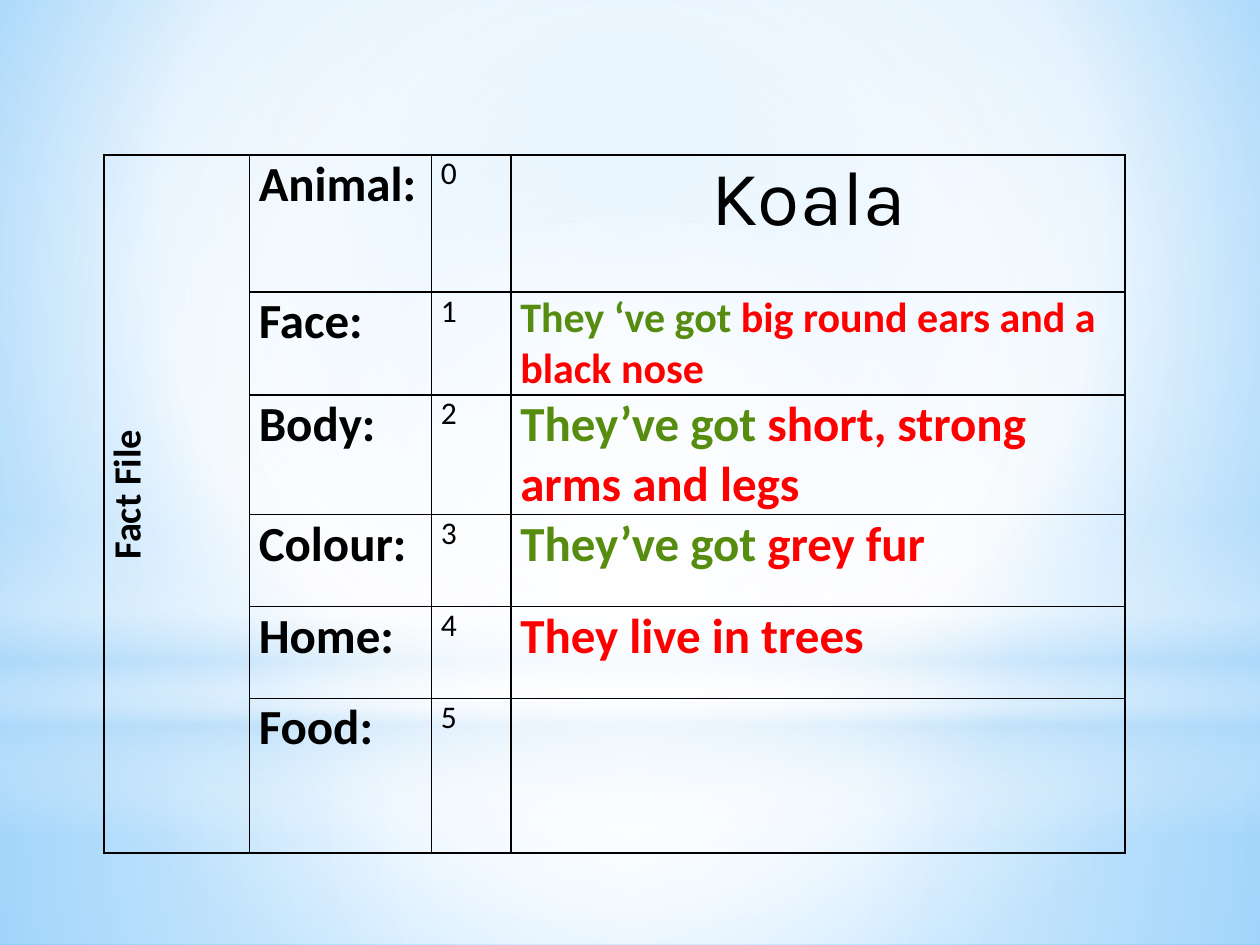
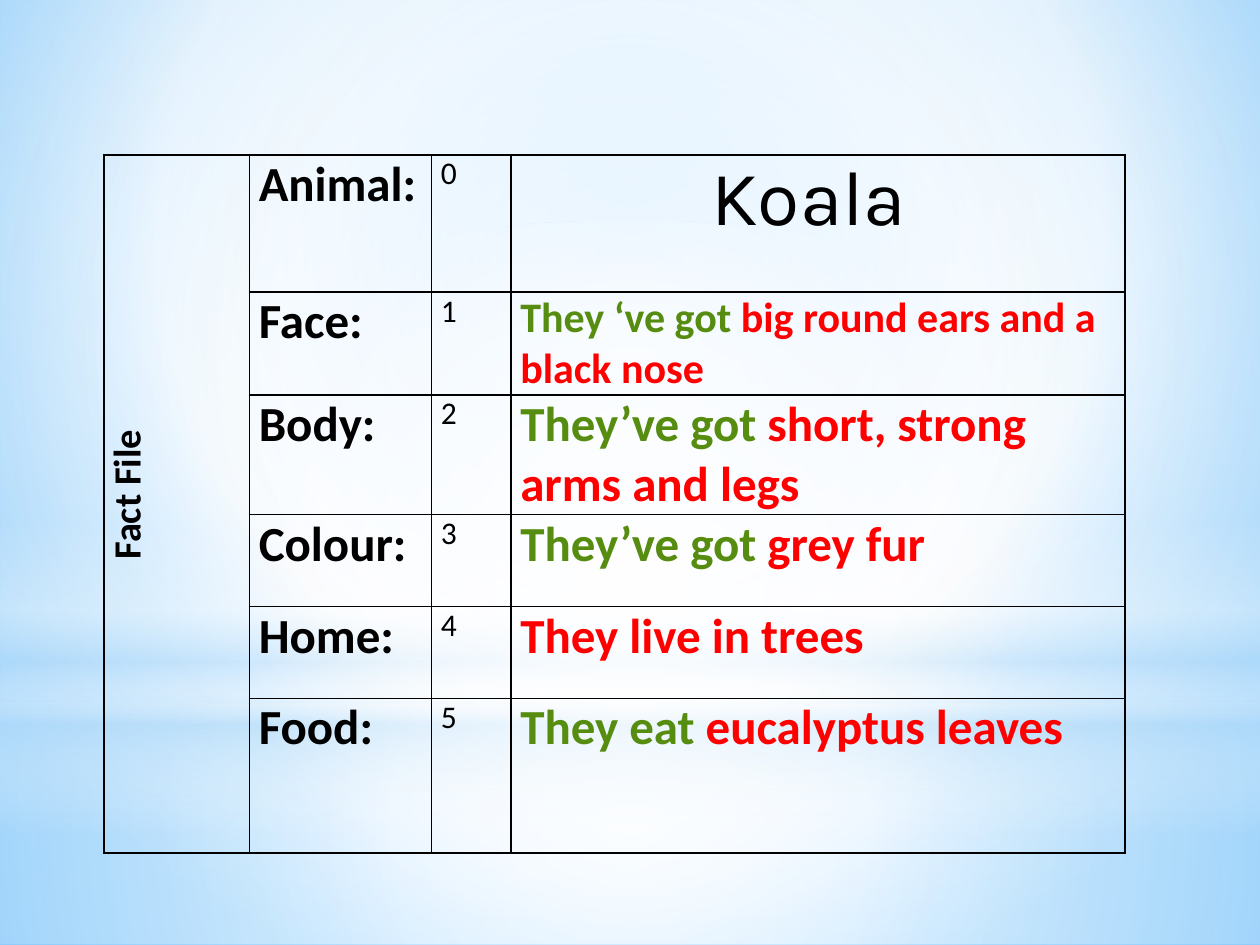
from dataclasses import dataclass

from lxml.etree import SubElement
from pptx import Presentation
from pptx.dml.color import RGBColor
from pptx.enum.shapes import MSO_SHAPE
from pptx.enum.text import MSO_ANCHOR, PP_ALIGN
from pptx.oxml.ns import qn
from pptx.util import Pt

BLACK, GREEN, RED = "000000", "568D11", "FF0000"
WHITE, SKY = "FFFFFF", "B4DCFA"
CENTRE = (50, 50, 50, 50)

# Table geometry in points
LEFT, TOP = 59.5, 88.5
COLUMNS = (83, 104, 45.5, 351)
ROWS = (78.5, 58.5, 68.5, 52.5, 52.5, 88.5)


@dataclass(frozen=True)
class Gradient:
    stops: tuple  # (position %, colour, opacity %)
    focus: tuple | None = CENTRE  # None means top to bottom


@dataclass(frozen=True)
class Glow:
    kind: MSO_SHAPE
    top: float
    height: float
    gradient: Gradient


@dataclass(frozen=True)
class Fact:
    label: str
    start: str = ""
    answer: str = ""
    size: float = 28


BACKDROP = Gradient(((0, "9ED5FF", 100), (60, WHITE, 100), (100, "5BB9FF", 100)),
                    (20, 10, 20, 60))
GLOWS = (
    Glow(MSO_SHAPE.RECTANGLE, 402, 138,
         Gradient(((0, WHITE, 91), (37, WHITE, 76), (100, SKY, 79)))),
    Glow(MSO_SHAPE.RECTANGLE, 0, 402,
         Gradient(((0, WHITE, 89), (48, WHITE, 62), (100, SKY, 79)))),
    Glow(MSO_SHAPE.RECTANGLE, 297, 180,
         Gradient(((0, WHITE, 0), (29, WHITE, 30), (45, SKY, 40),
                   (55, WHITE, 26), (65, SKY, 60), (100, WHITE, 0)), None)),
    Glow(MSO_SHAPE.OVAL, 126, 402,
         Gradient(((0, WHITE, 100), (56, WHITE, 0)))),
)

FACTS = (
    Fact("Face:", "They ‘ve got ", "big round ears and a black nose", 24),
    Fact("Body:", "They’ve got ", "short, strong arms and legs"),
    Fact("Colour:", "They’ve got ", "grey fur"),
    Fact("Home:", "", "They live in trees"),
)
FOOD_OPTIONS = (Fact("Food:"), Fact("Food:", "They eat ", "eucalyptus leaves"))


def rgb(colour: str) -> RGBColor:
    return RGBColor.from_string(colour)


def paint(fill, owner, gradient: Gradient) -> None:
    """Give a fill its gradient stops, opacity and direction."""
    fill.gradient()
    grad = owner.find(".//" + qn("a:gradFill"))
    for child in list(grad):
        grad.remove(child)
    stops = SubElement(grad, qn("a:gsLst"))
    for position, colour, opacity in gradient.stops:
        stop = SubElement(stops, qn("a:gs"), pos=str(position * 1000))
        clr = SubElement(stop, qn("a:srgbClr"), val=colour)
        if opacity < 100:
            SubElement(clr, qn("a:alpha"), val=str(opacity * 1000))
    if gradient.focus is None:
        SubElement(grad, qn("a:lin"), ang="5400000", scaled="0")
    else:
        direction = SubElement(grad, qn("a:path"), path="circle")
        edges = {k: str(v * 1000) for k, v in zip("ltrb", gradient.focus)}
        SubElement(direction, qn("a:fillToRect"), **edges)


def build_master(prs, s) -> None:
    """Set the backdrop and move the glow shapes behind every slide."""
    master = prs.slide_master
    paint(master.background.fill, master.element, BACKDROP)
    for i, glow in enumerate(GLOWS):
        shape = s.shapes.add_shape(glow.kind, 0, Pt(glow.top),
                                   prs.slide_width, Pt(glow.height))
        shape.shadow.inherit = False
        shape.line.fill.background()
        paint(shape.fill, shape.element, glow.gradient)
        shape.element.find(".//" + qn("p:cNvPr")).set("id", str(100 + i))
        master.shapes.element.insert(2 + i, shape.element)


def write(cell, text: str, size: float = 28, color: str = BLACK, bold: bool = True,
          font: str = "Calibri", align: PP_ALIGN = PP_ALIGN.LEFT) -> None:
    p = cell.text_frame.paragraphs[0]
    p.alignment = align
    r = p.add_run()
    r.text = text
    r.font.size, r.font.bold, r.font.name = Pt(size), bold, font
    r.font.color.rgb = rgb(color)


def format_cell(cell) -> None:
    cell.margin_left = cell.margin_right = Pt(5.4)
    cell.margin_top = cell.margin_bottom = 0
    cell.fill.background()
    tcPr = cell._tc.get_or_add_tcPr()
    for i, side in enumerate("LRTB"):
        ln = SubElement(tcPr, qn(f"a:ln{side}"), w=str(Pt(1)))
        clr = SubElement(ln, qn("a:solidFill"))
        SubElement(clr, qn("a:srgbClr"), val=BLACK)
        tcPr.insert(i, ln)


def add_fact_file(s, facts: tuple) -> None:
    frame = s.shapes.add_table(len(ROWS), len(COLUMNS), Pt(LEFT), Pt(TOP),
                               Pt(sum(COLUMNS)), Pt(sum(ROWS)))
    table = frame.table
    table.first_row = table.horz_banding = False
    for column, width in zip(table.columns, COLUMNS):
        column.width = Pt(width)
    for row, height in zip(table.rows, ROWS):
        row.height = Pt(height)
    for cell in table.iter_cells():
        format_cell(cell)

    # Upright heading down the left side
    heading = table.cell(0, 0)
    heading.merge(table.cell(len(ROWS) - 1, 0))
    heading.vertical_anchor = MSO_ANCHOR.MIDDLE
    heading._tc.get_or_add_tcPr().set("vert", "vert270")
    write(heading, " Fact File", size=22, align=PP_ALIGN.CENTER)
    p = heading.text_frame.paragraphs[0]
    p._p.get_or_add_pPr().set("marL", str(Pt(5.65)))

    # Animal name, then one numbered row for each fact
    write(table.cell(0, 3), "Koala ", size=44, bold=False, font="Karla",
          align=PP_ALIGN.CENTER)
    for i, fact in enumerate((Fact("Animal:"),) + facts):
        write(table.cell(i, 1), fact.label)
        write(table.cell(i, 2), str(i), size=18, bold=False)
        for text, color in ((fact.start, GREEN), (fact.answer, RED)):
            if text:
                write(table.cell(i, 3), text, size=fact.size, color=color)


def main() -> None:
    prs = Presentation()
    prs.slide_width, prs.slide_height = Pt(720), Pt(540)
    blank = prs.slide_layouts[6]
    for i, food in enumerate(FOOD_OPTIONS):
        s = prs.slides.add_slide(blank)
        if i == 0:
            build_master(prs, s)
        add_fact_file(s, FACTS + (food,))
    prs.save("out.pptx")


if __name__ == "__main__":
    main()
